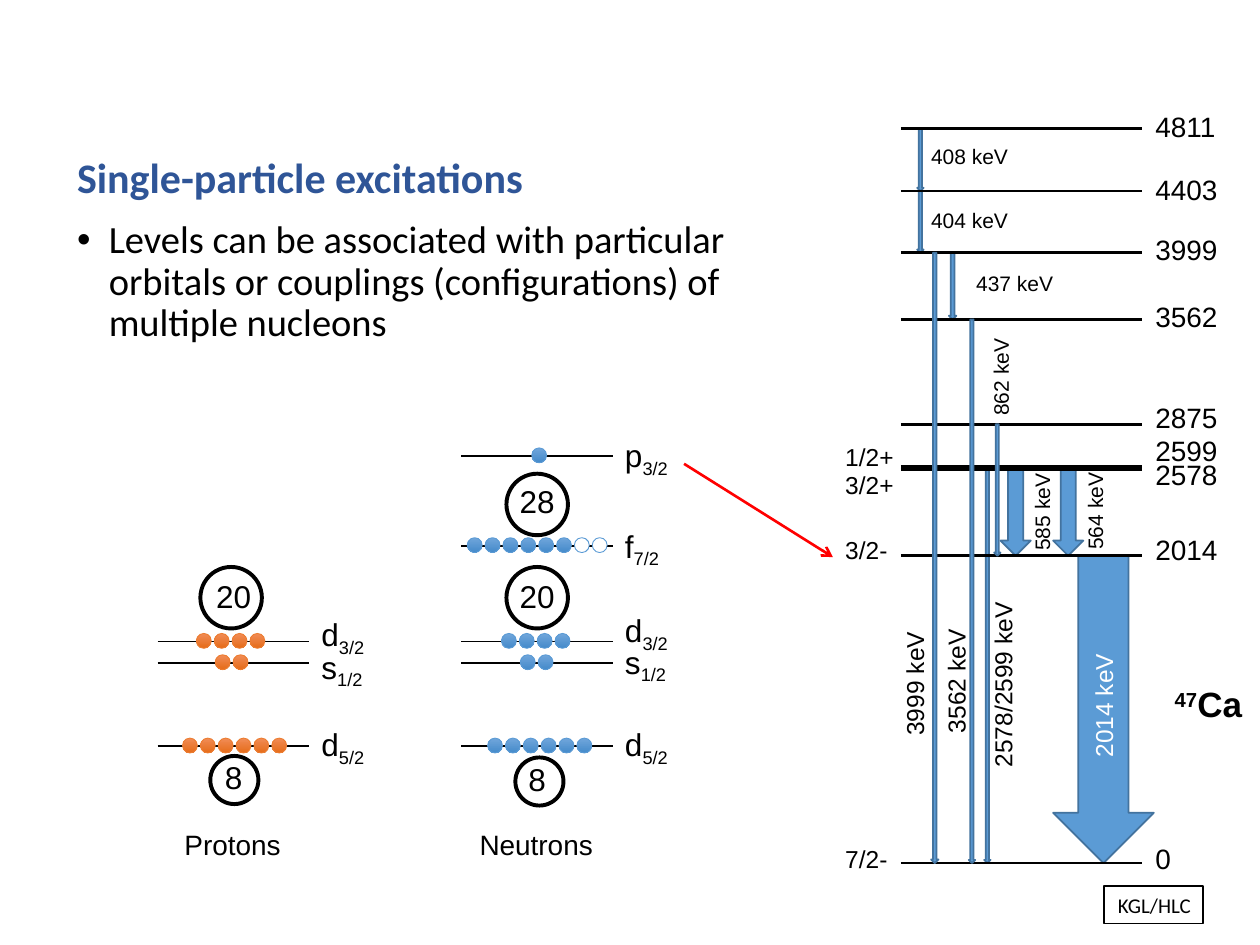
"""Build a slide on single-particle excitations with the level scheme of 47Ca."""
from lxml import etree
from pptx import Presentation
from pptx.dml.color import RGBColor
from pptx.enum.shapes import MSO_CONNECTOR, MSO_SHAPE
from pptx.enum.text import MSO_ANCHOR, MSO_AUTO_SIZE, PP_ALIGN
from pptx.oxml.ns import qn
from pptx.util import Cm, Pt

STRAIGHT = MSO_CONNECTOR.STRAIGHT
DOWN, OVAL, RECT = MSO_SHAPE.DOWN_ARROW, MSO_SHAPE.OVAL, MSO_SHAPE.RECTANGLE
TOP, MIDDLE = MSO_ANCHOR.TOP, MSO_ANCHOR.MIDDLE
FIXED, GROW = MSO_AUTO_SIZE.NONE, MSO_AUTO_SIZE.SHAPE_TO_FIT_TEXT
LEFT, CENTER, RIGHT = PP_ALIGN.LEFT, PP_ALIGN.CENTER, PP_ALIGN.RIGHT

BLACK = RGBColor(0x00, 0x00, 0x00)
WHITE = RGBColor(0xFF, 0xFF, 0xFF)
RED = RGBColor(0xFF, 0x00, 0x00)
NAVY = RGBColor(0x2F, 0x55, 0x97)
BLUE = RGBColor(0x5B, 0x9B, 0xD5)
STEEL = RGBColor(0x43, 0x73, 0x9E)
ORANGE = RGBColor(0xED, 0x7D, 0x31)
WARM = (RGBColor(0xF1, 0x8C, 0x57), RGBColor(0xE5, 0x6C, 0x19))
COOL = (RGBColor(0x71, 0xA6, 0xDB), RGBColor(0x44, 0x8A, 0xCA))

LEVELS = [(4811, 2.08), (4403, 3.35), (3999, 4.57), (3562, 5.92), (2875, 7.95),
          (2599, 8.61), (2578, 9.09), (2014, 10.62), (0, 16.84)]
SPINS = [("7/2-", 16.89, 1.37), ("3/2-", 10.67, 1.37),
         ("3/2+", 9.35, 1.52), ("1/2+", 8.79, 1.52)]
BACK = [(2014, 0, 21.23, 2.03), (2578, 2014, 21.23, 0.61), (2599, 2014, 20.17, 0.61),
        (2578, 0, 19.84, 0.13), (3999, 3562, 19.13, 0.15),
        (4403, 3999, 18.49, 0.13), (4811, 4403, 18.49, 0.13)]
FRONT = [(3562, 0, 19.53, 0.13), (3999, 0, 18.77, 0.15), (2875, 2014, 20.04, 0.13)]
GAMMAS = [("2014", (20.83, 13.67, 2.84, 0.86), 14, 270, WHITE),
          ("2578/2599", (18.19, 13.26, 4.06, 0.86), 14, 270, BLACK),
          ("3562", (17.25, 12.57, 4.06, 0.86), 14, 270, BLACK),
          ("3999", (16.41, 12.62, 4.06, 0.86), 14, 270, BLACK),
          ("585", (19.91, 9.88, 2.18, 0.76), 12, 270, BLACK),
          ("564", (20.98, 9.86, 2.18, 0.76), 12, 270, BLACK),
          ("862", (19.08, 7.16, 2.18, 0.76), 12, 270, BLACK),
          ("437", (19.43, 5.33, 2.21, 0.76), 12, 0, BLACK),
          ("404", (18.52, 4.06, 2.21, 0.76), 12, 0, BLACK),
          ("408", (18.52, 2.77, 2.21, 0.76), 12, 0, BLACK)]
PROTONS = [("d", "5/2", 15.04, 14.5, 3.68, 6, 0), ("s", "1/2", 13.36, 12.93, 4.34, 2, 0),
           ("d", "3/2", 12.93, 12.27, 3.96, 4, 0)]
NEUTRONS = [("d", "5/2", 15.04, 14.5, 9.83, 6, 0), ("s", "1/2", 13.36, 12.83, 10.49, 2, 0),
            ("d", "3/2", 12.93, 12.19, 10.11, 4, 0), ("f", "7/2", 11.0, 10.49, 9.42, 6, 2),
            ("p", "3/2", 9.19, 8.66, 10.72, 1, 0)]
MAGIC = [("20", 4.04, 11.43, 1.24, 4.09, 11.51), ("20", 10.21, 11.43, 1.24, 10.21, 11.51),
         ("28", 10.21, 9.55, 1.24, 10.21, 9.6), ("8", 4.24, 15.24, 0.97, 4.09, 15.16),
         ("8", 10.39, 15.27, 0.97, 10.21, 15.19)]


def height(kev):
    """Return the vertical place of an energy in cm."""
    return 17.4 - kev / 325


def add_run(par, text, size, color, font="Arial", bold=False, base=0):
    """Add one run of text to a paragraph."""
    run = par.add_run()
    run.text = text
    run.font.name, run.font.size, run.font.bold = font, Pt(size), bold
    run.font.color.rgb = color
    if base:
        run.font._element.set("baseline", str(base * 1000))


def add_label(shapes, runs, box, size, color=BLACK, align=LEFT, wrap=True, turn=0, bold=False):
    """Add a text box from pairs of text and baseline shift."""
    item = shapes.add_textbox(*map(Cm, box))
    item.rotation = turn
    frame = item.text_frame
    frame.word_wrap, frame.auto_size = wrap, GROW
    par = frame.paragraphs[0]
    par.alignment = align
    for text, base in runs:
        add_run(par, text, size, color, bold=bold, base=base)


def add_line(shapes, start, end, width, color=BLACK, tip=False):
    """Add a straight line, with an open arrowhead if asked."""
    item = shapes.add_connector(STRAIGHT, *map(Cm, start + end))
    item.line.color.rgb, item.line.width = color, Pt(width)
    if tip:
        etree.SubElement(item.line._get_or_add_ln(), qn("a:tailEnd"), type="arrow")
    etree.SubElement(item._element.spPr, qn("a:effectLst"))


def add_form(shapes, kind, box, line, width, fill=None):
    """Add a preset shape with a plain, graded or empty fill."""
    item = shapes.add_shape(kind, *map(Cm, box))
    item.shadow.inherit = False
    item.line.color.rgb, item.line.width = line, Pt(width)
    if fill is None:
        item.fill.background()
    elif isinstance(fill, RGBColor):
        item.fill.solid()
        item.fill.fore_color.rgb = fill
    else:
        item.fill.gradient()
        item.fill.gradient_angle = 270
        for stop, color in zip(item.fill.gradient_stops, fill):
            stop.color.rgb = color
    return item


def add_decays(shapes, decays):
    """Add block arrows between pairs of levels."""
    for high, low, left, width in decays:
        top = height(high)
        add_form(shapes, DOWN, (left, top, width, height(low) - top), STEEL, 1, BLUE)


def add_scheme(shapes):
    """Add the levels, decays and their labels."""
    add_decays(shapes, BACK)
    for kev, top in LEVELS:
        y = height(kev)
        add_line(shapes, (18.16, y), (23.03, y), 1.5)
        add_label(shapes, [(str(kev), 0)], (23.04, top, 1.78 if kev else 0.84, 0.94), 16, wrap=False)
    add_decays(shapes, FRONT)
    for text, top, width in SPINS:
        add_label(shapes, [(text, 0)], (16.79, top, width, 0.86), 14, wrap=False)
    for value, box, size, turn, color in GAMMAS:
        add_label(shapes, [(value + " keV", 0)], box, size, color, turn=turn)
    add_label(shapes, [("47", 30), ("Ca", 0)], (23.27, 13.64, 2.18, 1.12), 20, align=CENTER, bold=True)


def add_shells(shapes, name, left, rows, line, fill):
    """Add one column of orbitals with their nucleons."""
    for orbit, spin, y, top, first, full, free in rows:
        add_line(shapes, (left, y), (left + 3.05, y), 1)
        add_label(shapes, [(orbit, 0), (spin, -25)], (left + 3.05, top, 2.46, 1.02), 18)
        for i in range(full + free):
            box = (first + 0.36 * i, y - 0.16, 0.3, 0.3)
            add_form(shapes, OVAL, box, line, 0.5, fill if i < full else WHITE)
    add_label(shapes, [(name, 0)], (left, 16.56, 3.02, 0.94), 16, align=CENTER)


def add_magic(shapes):
    """Add the circled magic numbers."""
    for text, left, top, size, x, y in MAGIC:
        add_form(shapes, OVAL, (left, top, size, size), BLACK, 2.25)
        add_label(shapes, [(text, 0)], (x, y, 1.24, 1.02), 18, align=CENTER)


def fill_body(body):
    """Place the body and write the heading and its point."""
    body.left, body.top, body.width, body.height = map(Cm, (1.3, 3.05, 14.35, 5.54))
    frame = body.text_frame
    frame.auto_size, frame.vertical_anchor = FIXED, TOP
    head, point = frame.paragraphs[0], frame.add_paragraph()
    for par, bullet, inset in ((head, None, 0), (point, "•", Cm(0.64))):
        props = par._p.get_or_add_pPr()
        props.set("marL", str(inset))
        props.set("indent", str(-inset))
        if bullet:
            etree.SubElement(props, qn("a:buChar"), char=bullet)
        else:
            etree.SubElement(props, qn("a:buNone"))
        par.alignment, par.line_spacing = LEFT, 0.9
        par.space_before = Pt(10 if bullet else 0)
    add_run(head, "Single-particle excitations", 24, NAVY, "Calibri", True)
    add_run(point, "Levels can be associated with particular orbitals or couplings "
            "(configurations) of multiple nucleons", 22, BLACK, "Calibri")


def add_credit(shapes):
    """Add the framed initials."""
    item = add_form(shapes, RECT, (22.25, 17.86, 2.01, 0.76), BLACK, 1)
    frame = item.text_frame
    frame.word_wrap, frame.auto_size, frame.vertical_anchor = False, GROW, MIDDLE
    frame.paragraphs[0].alignment = RIGHT
    add_run(frame.paragraphs[0], "KGL/HLC", 12, BLACK, "Calibri")


def main():
    """Build and save the slide."""
    deck = Presentation()
    deck.slide_width, deck.slide_height = Cm(25.4), Cm(19.05)
    slide = deck.slides.add_slide(deck.slide_layouts[1])
    shapes = slide.shapes
    title = shapes.title._element
    title.getparent().remove(title)
    fill_body(slide.placeholders[1])
    add_scheme(shapes)
    add_shells(shapes, "Protons", 3.18, PROTONS, ORANGE, WARM)
    add_shells(shapes, "Neutrons", 9.3, NEUTRONS, BLUE, COOL)
    add_magic(shapes)
    add_line(shapes, (13.79, 9.35), (16.79, 11.23), 1.5, RED, True)
    add_credit(shapes)
    deck.save("out.pptx")


if __name__ == "__main__":
    main()
